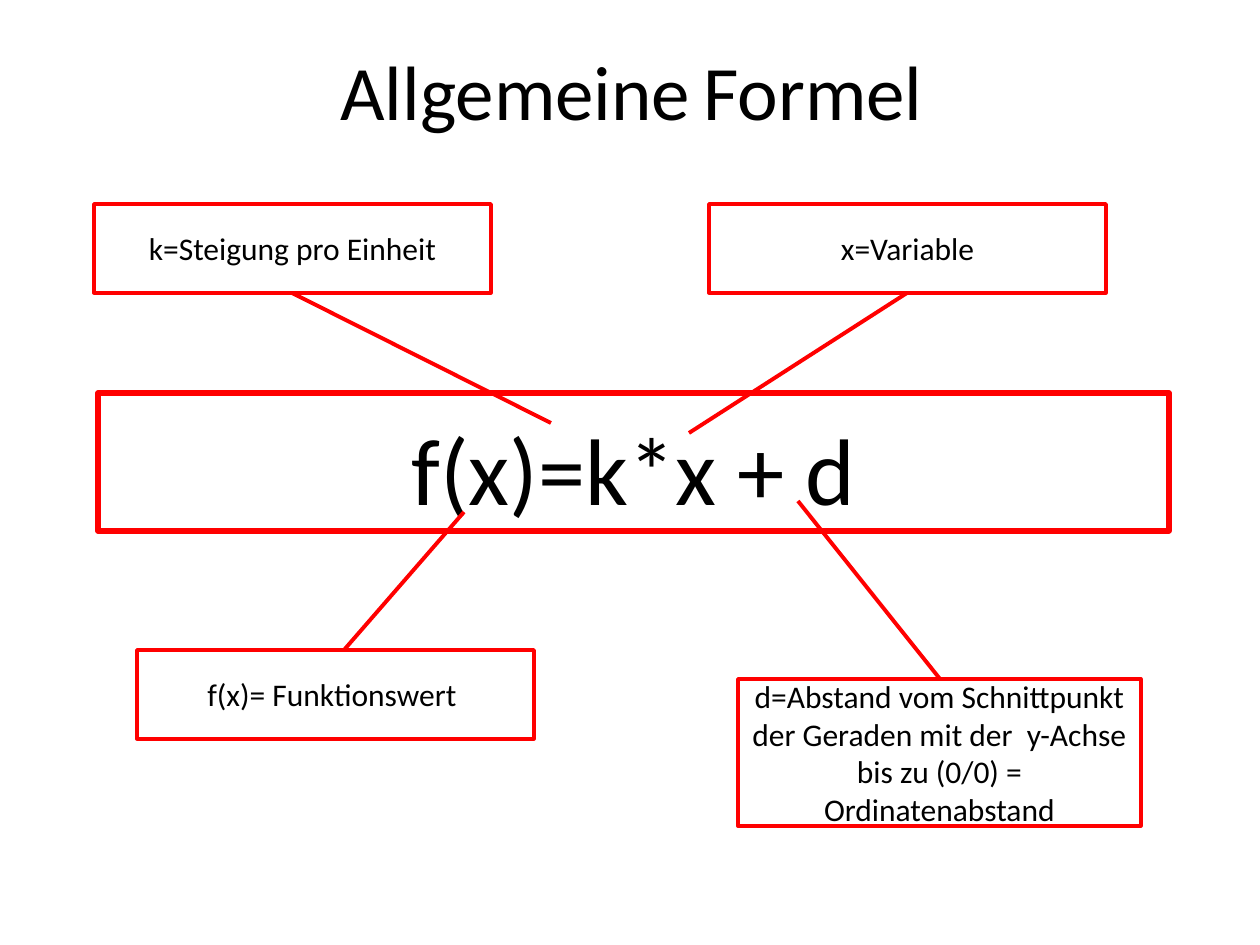
from pptx import Presentation
from pptx.dml.color import RGBColor
from pptx.enum.shapes import MSO_CONNECTOR, MSO_SHAPE
from pptx.enum.text import MSO_ANCHOR, PP_ALIGN
from pptx.oxml.ns import qn
from pptx.util import Pt
from lxml import etree

RECTANGLE = MSO_SHAPE.RECTANGLE
STRAIGHT = MSO_CONNECTOR.STRAIGHT
MIDDLE = MSO_ANCHOR.MIDDLE
CENTER = PP_ALIGN.CENTER
FONT = "Calibri"
COLORS = {"background": "FFFFFF", "frame": "FF0000", "text": "000000"}

PX_PER_INCH = 126
LABEL_W, LABEL_H = 397, 89
UPPER_Y = 204


def px(length):
    return round(length * 914400 / PX_PER_INCH)


def color(name):
    return RGBColor.from_string(COLORS[name])


def format_run(run, size):
    run.font.name = FONT
    run.font.size = Pt(size)
    run.font.color.rgb = color("text")


def add_heading(slide, box):
    heading = slide.shapes.add_textbox(*map(px, box))
    heading.text_frame.word_wrap = True
    paragraph = heading.text_frame.paragraphs[0]
    for wording, size in (("Allgemeine", 44), (" ", 32), ("Formel", 44)):
        run = paragraph.add_run()
        run.text = wording
        format_run(run, size)


def add_framed_text(slide, box, wording, size, line_width, top_inset=6):
    frame = slide.shapes.add_shape(RECTANGLE, *map(px, box))
    frame.shadow.inherit = False
    frame.fill.background()
    frame.line.color.rgb = color("frame")
    frame.line.width = Pt(line_width)
    text_frame = frame.text_frame
    text_frame.word_wrap = True
    text_frame.vertical_anchor = MIDDLE
    text_frame.margin_top = px(top_inset)
    text_frame.text = wording
    paragraph = text_frame.paragraphs[0]
    paragraph.alignment = CENTER
    format_run(paragraph.runs[0], size)


def add_pointer(slide, start, end):
    pointer = slide.shapes.add_connector(STRAIGHT, *map(px, start + end))
    pointer.line.color.rgb = color("frame")
    pointer.line.width = Pt(2.25)
    etree.SubElement(pointer._element.spPr, qn("a:effectLst"))


def add_explanation(slide, box, wording, anchor, target):
    left, top, _, _ = box
    add_framed_text(slide, box, wording, 18, 2)
    add_pointer(slide, (left + anchor[0], top + anchor[1]), target)


def build_formula_slide(slide):
    slide.background.fill.solid()
    slide.background.fill.fore_color.rgb = color("background")
    add_heading(slide, (328, 37, 932, 106))
    add_framed_text(slide, (98, 393, 1071, 138), "f(x)=k*x + d", 54, 3, top_inset=18)

    explanations = (
        ((94, UPPER_Y, LABEL_W, LABEL_H), "k=Steigung pro Einheit",
         (198, LABEL_H), (551, 423)),
        ((709, UPPER_Y, LABEL_W, LABEL_H), "x=Variable",
         (198, LABEL_H), (689, 433)),
        ((137, 650, LABEL_W, LABEL_H), "f(x)= Funktionswert ",
         (207, 0), (464, 512)),
        ((738, 679, 403, 147),
         "d=Abstand vom Schnittpunkt der Geraden mit der  y-Achse "
         "bis zu (0/0) = Ordinatenabstand",
         (202, 0), (798, 501)),
    )
    for box, wording, anchor, target in explanations:
        add_explanation(slide, box, wording, anchor, target)


def main():
    presentation = Presentation()
    presentation.slide_width = px(1260)
    presentation.slide_height = px(945)
    blank_layout = presentation.slide_layouts[6]
    build_formula_slide(presentation.slides.add_slide(blank_layout))
    presentation.save("out.pptx")


if __name__ == "__main__":
    main()
